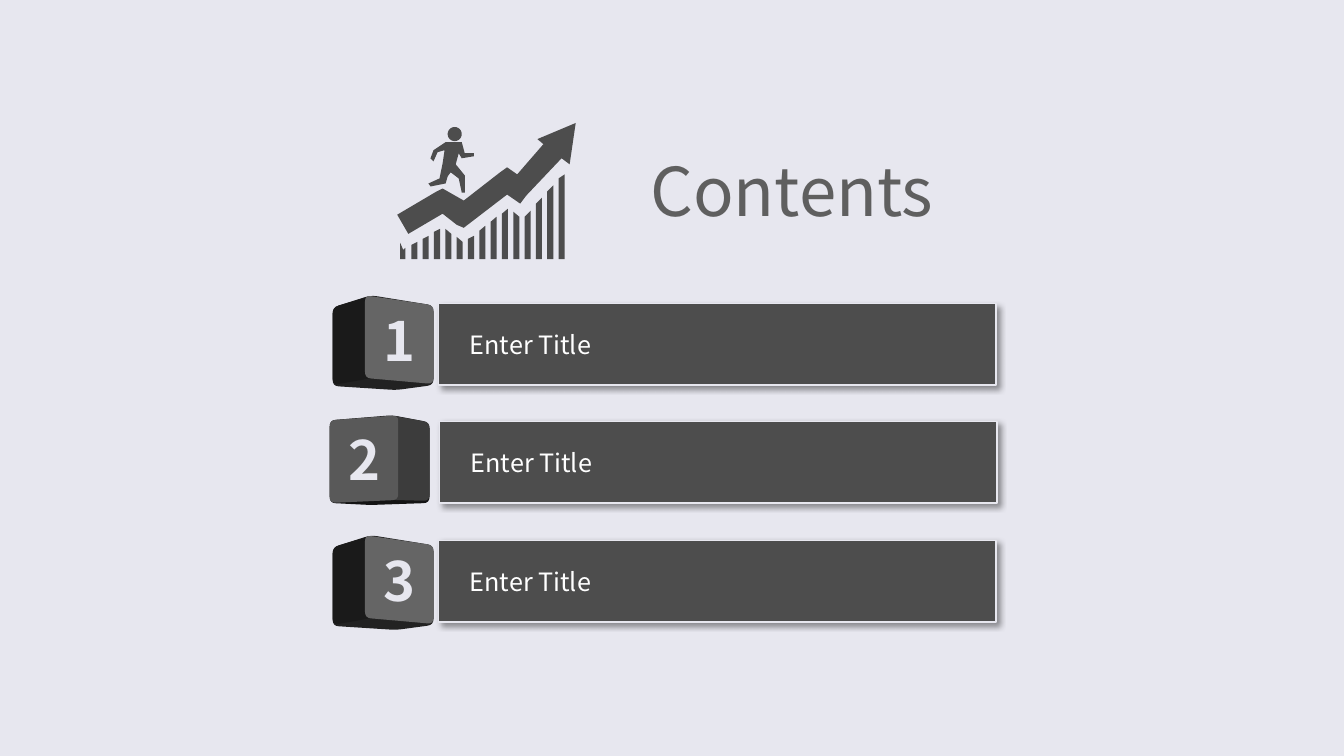
from dataclasses import dataclass
from math import cos, pi, sin
from lxml import etree
from pptx import Presentation
from pptx.dml.color import RGBColor
from pptx.enum import shapes, text
from pptx.oxml import ns
from pptx import util as u

Point = tuple[float, float]
Outline = list[Point]


@dataclass(frozen=True)
class Theme:
    font: str = "Noto Sans CJK JP"
    background: str = "E7E7EF"
    dark: str = "4D4D4D"
    heading: str = "5F5F5F"
    white: str = "FFFFFF"
    heading_size: float = 48
    number_size: float = 38.7
    title_size: float = 18


@dataclass(frozen=True)
class Cube:
    back: Outline
    side: Outline
    front: Outline
    colours: tuple[str, str, str]


@dataclass(frozen=True)
class Entry:
    number: str
    title: str
    bar_at: Point
    cube_at: Point
    cube: Cube


THEME = Theme()
BAR_SIZE = (5.53, 0.81)

RIGHT_CUBE = Cube(
    back=[(0, 0.12), (0.38, 0), (1, 0.1), (1, 0.89), (0.63, 0.94), (0, 0.9)],
    side=[(0, 0.12), (0.4, 0), (0.4, 0.82), (0, 0.89)],
    front=[(0.32, 0), (1, 0.1), (1, 0.88), (0.32, 0.82)],
    colours=("222222", "1A1A1A", "656565"),
)
LEFT_CUBE = Cube(
    back=[(0, 0.05), (0.62, 0), (0.99, 0.07), (0.99, 0.87), (0.4, 0.89), (0, 0.87)],
    side=[(0.6, 0), (0.99, 0.07), (0.99, 0.85), (0.6, 0.84)],
    front=[(0, 0.05), (0.68, 0), (0.68, 0.84), (0, 0.87)],
    colours=("141414", "3C3C3C", "595959"),
)
ENTRIES = [
    Entry("1", "Enter Title", (4.35, 3.01), (3.3, 2.93), RIGHT_CUBE),
    Entry("2", "Enter Title", (4.36, 4.18), (3.27, 4.12), LEFT_CUBE),
    Entry("3", "Enter Title", (4.35, 5.36), (3.3, 5.31), RIGHT_CUBE),
]

ARROW = [
    (3.94, 2.13), (4.05, 2.32), (4.39, 2.12), (4.53, 2.23), (4.6, 2.26),
    (5.03, 1.93), (5.16, 2.02), (5.22, 1.94), (5.57, 1.57), (5.65, 1.63),
    (5.71, 1.22), (5.33, 1.38), (5.39, 1.43), (5.13, 1.73), (5.03, 1.66),
    (4.96, 1.71), (4.6, 1.99), (4.39, 1.87), (4.33, 1.9),
]
RUNNER = [
    (4.27, 1.57), (4.3, 1.49), (4.42, 1.41), (4.58, 1.41), (4.61, 1.52),
    (4.7, 1.52), (4.7, 1.55), (4.58, 1.57), (4.55, 1.52), (4.52, 1.63),
    (4.61, 1.74), (4.61, 1.91), (4.58, 1.91), (4.55, 1.77), (4.47, 1.71),
    (4.44, 1.75), (4.42, 1.82), (4.27, 1.85), (4.25, 1.82), (4.36, 1.77),
    (4.39, 1.62), (4.41, 1.49), (4.34, 1.51), (4.3, 1.6),
]
FIRST_COLUMN = [(3.97, 2.57), (3.97, 2.41), (4, 2.48), (4.02, 2.46), (4.02, 2.57)]
COLUMN_TOPS = [
    (2.43, 2.4), (2.37, 2.34), (2.3, 2.27), (2.27, 2.32), (2.35, 2.4),
    (2.37, 2.34), (2.29, 2.24), (2.2, 2.15), (2.12, 2.07), (2.1, 2.15),
    (2.15, 2.09), (2.02, 1.96), (1.9, 1.84), (1.77, 1.73),
]


def growth_icon() -> list[Outline]:
    """Outlines of the runner, the arrow and the columns under it."""
    head = [(4.51 + 0.07 * cos(k * pi / 12), 1.33 + 0.07 * sin(k * pi / 12))
            for k in range(24)]
    pitch = (5.54 - 4.08) / (len(COLUMN_TOPS) - 1)
    columns = []
    for i, (left_top, right_top) in enumerate(COLUMN_TOPS):
        x = 4.08 + i * pitch
        columns.append([(x, 2.57), (x, left_top), (x + 0.06, right_top), (x + 0.06, 2.57)])
    return [head, RUNNER, ARROW, FIRST_COLUMN, *columns]


def rounded(corners: Outline, radius: float = 0.06) -> Outline:
    """Replace each corner by a short quadratic curve."""
    points = []
    for i, (x, y) in enumerate(corners):
        ends = []
        for nx, ny in (corners[i - 1], corners[(i + 1) % len(corners)]):
            share = radius / ((nx - x) ** 2 + (ny - y) ** 2) ** 0.5
            ends.append((x + (nx - x) * share, y + (ny - y) * share))
        (ax, ay), (bx, by) = ends
        for t in (0, 0.25, 0.5, 0.75, 1):
            a, c, b = (1 - t) ** 2, 2 * t * (1 - t), t ** 2
            points.append((a * ax + c * x + b * bx, a * ay + c * y + b * by))
    return points


def paint(sp, colour: str) -> None:
    sp.shadow.inherit = False
    sp.fill.solid()
    sp.fill.fore_color.rgb = RGBColor.from_string(colour)
    sp.line.fill.background()


def add_outlines(s, outlines: list[Outline], colour: str, at: Point = (0, 0)):
    placed = [[(u.Inches(x + at[0]), u.Inches(y + at[1])) for x, y in o] for o in outlines]
    builder = s.shapes.build_freeform(*placed[0][0])
    for i, points in enumerate(placed):
        if i:
            builder.move_to(*points[0])
        builder.add_line_segments(points[1:], close=True)
    sp = builder.convert_to_shape()
    paint(sp, colour)
    return sp


def write(sp, words: str, size: float, colour: str, align=text.PP_ALIGN.LEFT,
          bold: bool = False, **frame) -> None:
    tf = sp.text_frame
    for name, value in frame.items():
        setattr(tf, name, value)
    p = tf.paragraphs[0]
    p.alignment = align
    r = p.add_run()
    r.text = words
    for name, value in {"name": THEME.font, "size": u.Pt(size), "bold": bold}.items():
        setattr(r.font, name, value)
    r.font.color.rgb = RGBColor.from_string(colour)


def add_shadow(sp) -> None:
    effects = sp.element.spPr.find(ns.qn("a:effectLst"))
    shadow = etree.SubElement(effects, ns.qn("a:outerShdw"), blurRad=str(u.Pt(4)),
                              dist=str(u.Pt(3)), dir=str(45 * 60000),
                              algn="tl", rotWithShape="0")
    colour = etree.SubElement(shadow, ns.qn("a:srgbClr"), val="000000")
    etree.SubElement(colour, ns.qn("a:alpha"), val="40000")


def add_entry(s, entry: Entry) -> None:
    box = [u.Inches(v) for v in (*entry.bar_at, *BAR_SIZE)]
    bar = s.shapes.add_shape(shapes.MSO_SHAPE.RECTANGLE, *box)
    paint(bar, THEME.dark)
    bar.line.color.rgb = RGBColor.from_string(THEME.background)
    bar.line.width = u.Pt(1)
    add_shadow(bar)
    write(bar, entry.title, THEME.title_size, THEME.white, word_wrap=True,
          vertical_anchor=text.MSO_ANCHOR.MIDDLE,
          margin_left=u.Inches(0.31), margin_right=u.Inches(0.31))

    cube = entry.cube
    for face, colour in zip((cube.back, cube.side, cube.front), cube.colours):
        sp = add_outlines(s, [rounded(face)], colour, entry.cube_at)
    write(sp, entry.number, THEME.number_size, THEME.background,
          text.PP_ALIGN.CENTER, True, word_wrap=False,
          vertical_anchor=text.MSO_ANCHOR.MIDDLE,
          margin_left=0, margin_right=0, margin_top=0, margin_bottom=0)


def main() -> None:
    prs = Presentation()
    prs.slide_width, prs.slide_height = u.Inches(13.33), u.Inches(7.5)
    s = prs.slides.add_slide(prs.slide_layouts[6])
    s.background.fill.solid()
    s.background.fill.fore_color.rgb = RGBColor.from_string(THEME.background)

    heading = s.shapes.add_textbox(*(u.Inches(v) for v in (6.35, 1.43, 2.96, 0.94)))
    write(heading, "Contents", THEME.heading_size, THEME.heading,
          word_wrap=True, margin_right=0)
    add_outlines(s, growth_icon(), THEME.dark)
    for entry in ENTRIES:
        add_entry(s, entry)
    prs.save("out.pptx")


if __name__ == "__main__":
    main()
